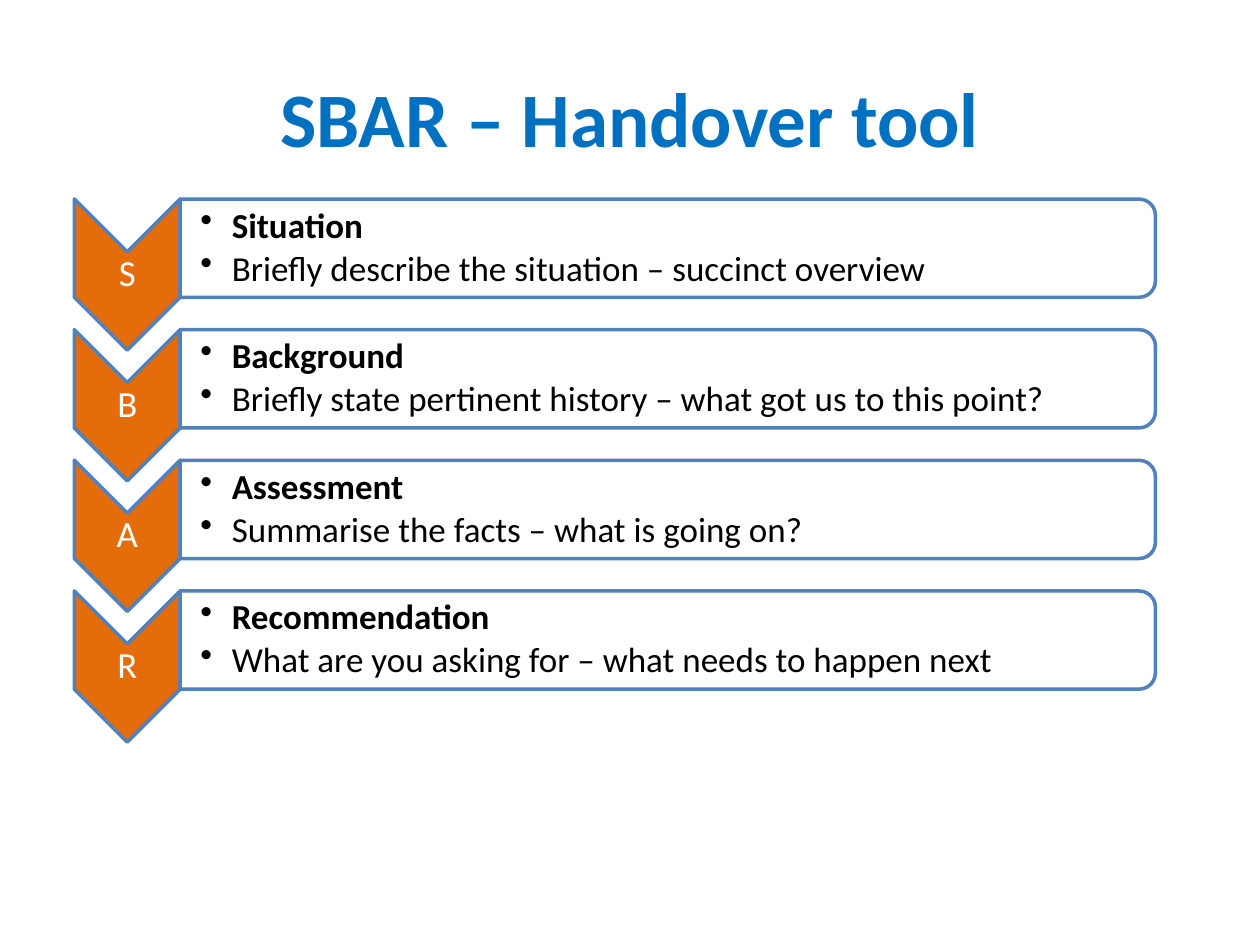
from pptx import Presentation
from pptx.dml.color import RGBColor as RGB
from pptx.enum.shapes import MSO_SHAPE as Shape
from pptx.enum.text import MSO_ANCHOR as Anchor, PP_ALIGN as Align
from pptx.oxml.ns import qn
from pptx.util import Inches, Pt
from lxml.etree import SubElement

theme = {
    "font": "Calibri",
    "title": {"size": Pt(44), "bold": True, "color": "0070C0"},
    "letter": {"size": Pt(21), "bold": False, "color": "FFFFFF"},
    "head": {"size": Pt(20), "bold": True, "color": "000000"},
    "body": {"size": Pt(20), "bold": False, "color": "000000"},
    "arrow": "E46C0A",
    "card": "FFFFFF",
    "line": "4F81BD",
}

deck = Presentation()
deck.slide_width, deck.slide_height = Inches(10), Inches(7.5)
slide = deck.slides.add_slide(deck.slide_layouts[6])


def add_text(x, y, w, h, lines, left=0.01, **para):
    """Add a centred-in-height text box; lines are (words, style) pairs."""
    box = slide.shapes.add_textbox(Inches(x), Inches(y), Inches(w), Inches(h))
    frame = box.text_frame
    edge = Inches(0.01)
    form = {"word_wrap": True, "vertical_anchor": Anchor.MIDDLE, "margin_left": Inches(left),
            "margin_right": edge, "margin_top": edge, "margin_bottom": edge}
    for key, val in form.items():
        setattr(frame, key, val)
    for i, (words, style) in enumerate(lines):
        part = frame.add_paragraph() if i else frame.paragraphs[0]
        for key, val in para.items():
            setattr(part, key, val)
        run = part.add_run()
        run.text = words
        look = theme[style]
        run.font.name = theme["font"]
        run.font.size, run.font.bold = look["size"], look["bold"]
        run.font.color.rgb = RGB.from_string(look["color"])
    return frame


def add_turned(kind, mid_x, mid_y, w, h, fill):
    """Add a shape turned by 90 degrees about its centre."""
    shape = slide.shapes.add_shape(kind, Inches(mid_x - w / 2), Inches(mid_y - h / 2),
                                   Inches(w), Inches(h))
    shape.rotation = 90
    shape.shadow.inherit = False
    shape.fill.solid()
    shape.fill.fore_color.rgb = RGB.from_string(theme[fill])
    shape.line.color.rgb = RGB.from_string(theme["line"])
    shape.line.width = Pt(2)
    return shape


# Title
add_text(0.5, 0.3, 9, 1.25, [("SBAR – Handover tool", "title")], alignment=Align.CENTER)

# Steps: an arrow with its letter, and a card with two bullets
steps = [
    ("Situation", "Briefly describe the situation – succinct overview"),
    ("Background", "Briefly state pertinent history – what got us to this point?"),
    ("Assessment", "Summarise the facts – what is going on?"),
    ("Recommendation", "What are you asking for – what needs to happen next"),
]
top, pitch = 1.58, 3.11 / 3

for i, (head, body) in enumerate(steps):
    y = top + i * pitch
    add_turned(Shape.CHEVRON, 1.01, y + 0.6, 1.2, 0.84, "arrow")
    add_text(0.59, y + 0.42, 0.84, 0.36, [(head[0], "letter")],
             alignment=Align.CENTER, line_spacing=0.9)

    card = add_turned(Shape.ROUND_2_SAME_RECTANGLE, 5.3, y + 0.39, 0.78, 7.74, "card")
    tint = card.fill._xPr.find(qn("a:solidFill"))[0]
    SubElement(tint, qn("a:alpha"), val="90000")

    frame = add_text(1.43, y + 0.04, 7.7, 0.7, [(head, "head"), (body, "body")],
                     left=0.16, line_spacing=0.9, space_after=Pt(3))
    for part in frame.paragraphs:
        props = part._p.get_or_add_pPr()
        props.set("marL", str(Inches(0.25)))
        props.set("indent", str(Inches(-0.25)))
        SubElement(props, qn("a:buChar"), char="•")

deck.save("out.pptx")
